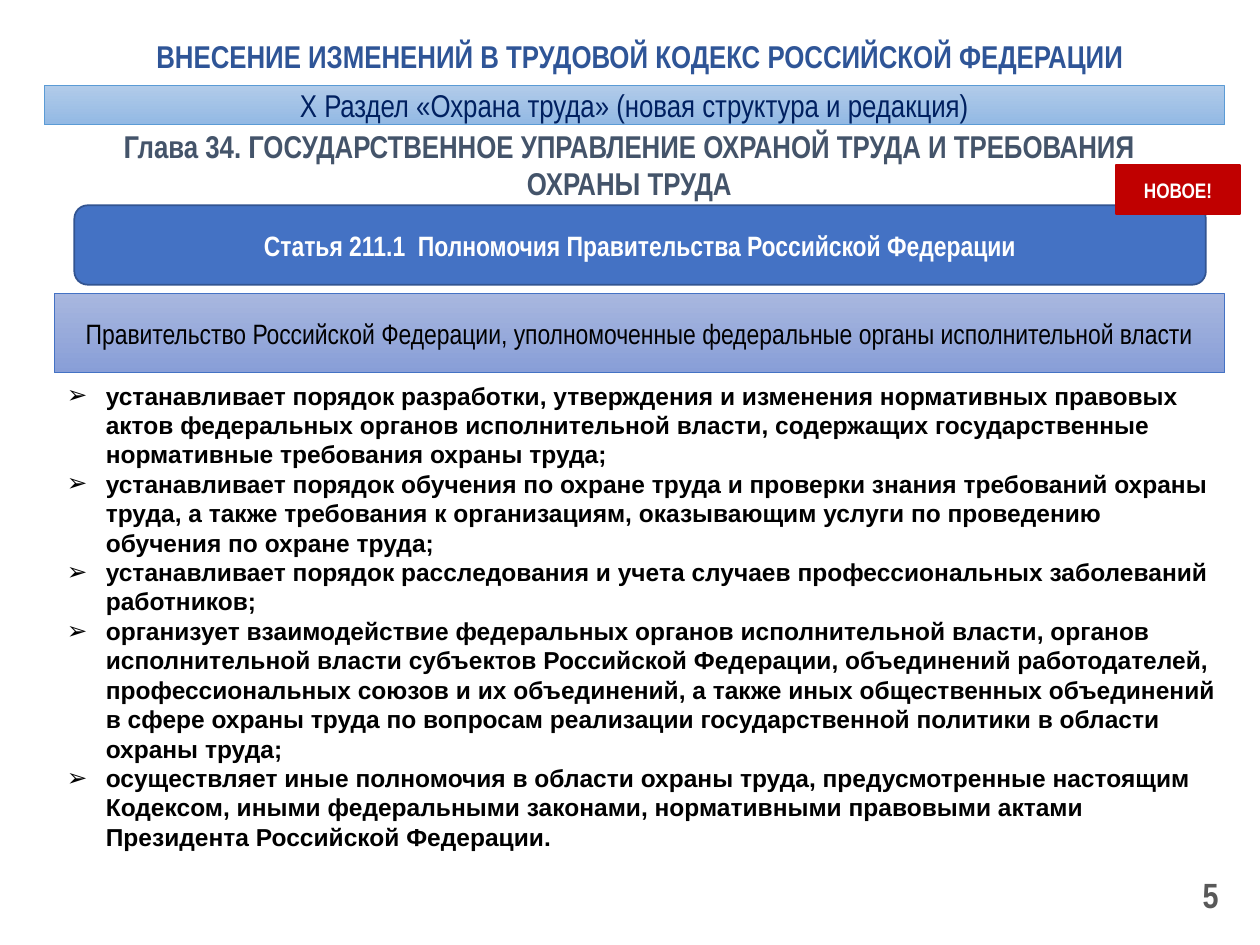
from dataclasses import dataclass

from lxml.etree import SubElement
from pptx import Presentation
from pptx.dml.color import RGBColor
from pptx.enum.shapes import MSO_SHAPE as Shape
from pptx.enum.text import MSO_ANCHOR as Anchor, MSO_AUTO_SIZE as AutoSize, PP_ALIGN as Align
from pptx.oxml.ns import qn
from pptx.util import Inches, Pt


@dataclass(frozen=True)
class Theme:
    """Colours, fonts and type sizes of the slide."""
    narrow: str = "Arial Narrow"
    plain: str = "Arial"
    heading: str = "2F5597"
    chapter: str = "44546A"
    section: str = "002060"
    article: str = "4472C4"
    article_edge: str = "325491"
    section_edge: str = "5B9BD5"
    section_shades: tuple = ("B1CBE9", "93B9E4")
    subject_shades: tuple = ("A8B7DF", "889ED7")
    badge: str = "C00000"
    number: str = "595959"
    white: str = "FFFFFF"
    black: str = "000000"
    number_size: int = 20
    heading_size: int = 18
    band_size: int = 16
    list_size: int = 14
    badge_size: int = 12


THEME = Theme()
WIDTH, HEIGHT = Inches(10), Inches(7.5)
INDENT = Inches(0.31)

DUTIES = [
    "устанавливает порядок разработки, утверждения и изменения нормативных правовых актов федеральных "
    "органов исполнительной власти, содержащих государственные нормативные требования охраны труда;",
    "устанавливает порядок обучения по охране труда и проверки знания требований охраны труда, а также "
    "требования к организациям, оказывающим услуги по проведению обучения по охране труда;",
    "устанавливает порядок расследования и учета случаев профессиональных заболеваний работников;",
    "организует взаимодействие федеральных органов исполнительной власти, органов исполнительной власти "
    "субъектов Российской Федерации, объединений работодателей, профессиональных союзов и их объединений, "
    "а также иных общественных объединений в сфере охраны труда по вопросам реализации государственной "
    "политики в области охраны труда;",
    "осуществляет иные полномочия в области охраны труда, предусмотренные настоящим Кодексом, иными "
    "федеральными законами, нормативными правовыми актами Президента Российской Федерации.",
]


def apply(target, formats):
    """Set every attribute named in formats on the target."""
    for attribute, value in formats.items():
        setattr(target, attribute, value)


def area(left, top, width, height):
    """Turn inches on the 10 by 7.5 slide into shares of its size."""
    return {"left": int(WIDTH * left / 10), "top": int(HEIGHT * top / 7.5),
            "width": int(WIDTH * width / 10), "height": int(HEIGHT * height / 7.5)}


def write(holder, lines, color, size, font=THEME.narrow, bold=True, align=Align.CENTER, anchor=Anchor.MIDDLE):
    """Fill a text holder with formatted paragraphs."""
    frame = holder.text_frame
    frame.text = "\n".join(lines)
    apply(frame, {"word_wrap": True, "auto_size": AutoSize.NONE, "vertical_anchor": anchor})
    for paragraph in frame.paragraphs:
        apply(paragraph, {"alignment": align, "space_before": Pt(0), "space_after": Pt(0)})
        for run in paragraph.runs:
            apply(run.font, {"name": font, "size": Pt(size), "bold": bold})
            run.font.color.rgb = RGBColor.from_string(color)


def add_bullets(holder, mark):
    """Give each paragraph a hanging bullet mark."""
    for paragraph in holder.text_frame.paragraphs:
        properties = paragraph._p.get_or_add_pPr()
        properties.set("marL", str(INDENT))
        properties.set("indent", str(-INDENT))
        SubElement(properties, qn("a:buFont"), typeface=THEME.plain)
        SubElement(properties, qn("a:buChar"), char=mark)


def add_panel(slide, place, text, color, size, kind=Shape.RECTANGLE, shades=(), edge=None, weight=1, bold=True):
    """Add a captioned panel with no fill, one colour or a vertical gradient."""
    panel = slide.shapes.add_shape(kind, **place)
    panel.shadow.inherit = False
    if len(shades) > 1:
        panel.fill.gradient()
        panel.fill.gradient_angle = 270
        for stop, shade, position in zip(panel.fill.gradient_stops, shades, (0, 1)):
            stop.color.rgb = RGBColor.from_string(shade)
            stop.position = position
    elif shades:
        panel.fill.solid()
        panel.fill.fore_color.rgb = RGBColor.from_string(shades[0])
    else:
        panel.fill.background()
    if edge:
        panel.line.color.rgb = RGBColor.from_string(edge)
        panel.line.width = Pt(weight)
    else:
        panel.line.fill.background()
    write(panel, [text], color, size, bold=bold)


def add_number(slide, place, text):
    """Add the page number at the lower right."""
    number = slide.shapes.add_textbox(**place)
    write(number, [text], THEME.number, THEME.number_size, align=Align.RIGHT)


def main():
    """Build the slide and save it."""
    deck = Presentation()
    apply(deck, {"slide_width": WIDTH, "slide_height": HEIGHT})
    slide = deck.slides.add_slide(deck.slide_layouts[1])

    heading, duties = slide.placeholders
    apply(heading, area(0.83, 0.13, 8.5, 0.63))
    write(heading, ["ВНЕСЕНИЕ ИЗМЕНЕНИЙ В ТРУДОВОЙ КОДЕКС РОССИЙСКОЙ ФЕДЕРАЦИИ"],
          THEME.heading, THEME.heading_size)
    apply(duties, area(0.43, 2.97, 9.34, 3.87))
    write(duties, DUTIES, THEME.black, THEME.list_size, THEME.plain, align=Align.LEFT, anchor=Anchor.TOP)
    add_bullets(duties, "➢")

    add_panel(slide, area(0.59, 1.63, 8.98, 0.63), "Статья 211.1  Полномочия Правительства Российской Федерации",
              THEME.white, THEME.band_size, Shape.ROUNDED_RECTANGLE, (THEME.article,), THEME.article_edge)
    add_panel(slide, area(8.86, 1.31, 0.98, 0.39), "НОВОЕ!",
              THEME.white, THEME.badge_size, shades=(THEME.badge,), edge=THEME.badge)
    add_panel(slide, area(0.82, 1.07, 8.35, 0.47),
              "Глава 34. ГОСУДАРСТВЕННОЕ УПРАВЛЕНИЕ ОХРАНОЙ ТРУДА И ТРЕБОВАНИЯ ОХРАНЫ ТРУДА",
              THEME.chapter, THEME.heading_size, Shape.ROUNDED_RECTANGLE)
    add_panel(slide, area(0.35, 0.68, 9.37, 0.31), "Х Раздел «Охрана труда» (новая структура и редакция)",
              THEME.section, THEME.heading_size, shades=THEME.section_shades,
              edge=THEME.section_edge, weight=0.5, bold=False)
    add_panel(slide, area(0.43, 2.33, 9.29, 0.63),
              "Правительство Российской Федерации, уполномоченные федеральные органы исполнительной власти",
              THEME.black, THEME.band_size, shades=THEME.subject_shades,
              edge=THEME.article, weight=0.5, bold=False)
    add_number(slide, area(7.44, 6.9, 2.33, 0.4), "5")
    deck.save("out.pptx")


if __name__ == "__main__":
    main()
